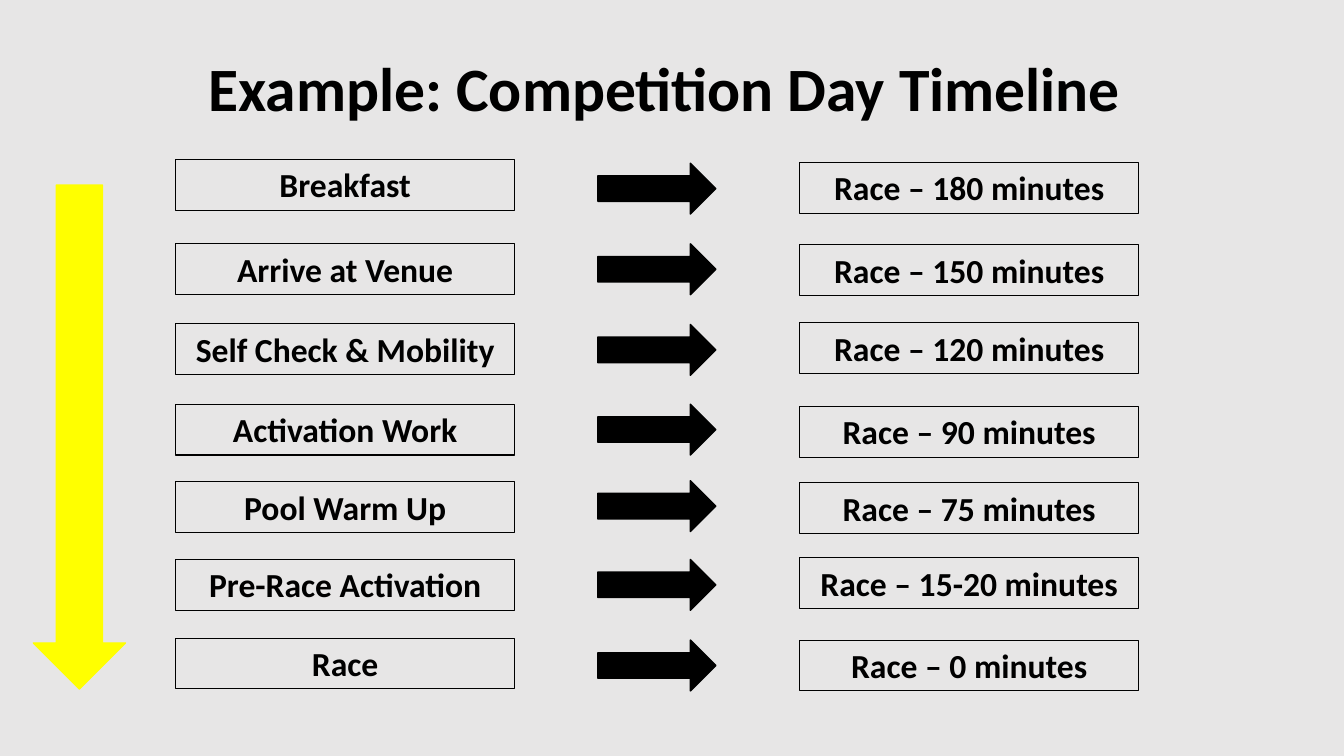
"""Build the competition day timeline slide."""
from pptx import Presentation
from pptx.dml.color import RGBColor
from pptx.enum.shapes import MSO_SHAPE
from pptx.enum.text import MSO_ANCHOR, MSO_AUTO_SIZE, PP_ALIGN
from pptx.util import Pt

TITLE = "Example: Competition Day Timeline "
STEPS = [
    ("Breakfast", "Race – 180 minutes"),
    ("Arrive at Venue", "Race – 150 minutes"),
    ("Self Check & Mobility", "Race – 120 minutes"),
    ("Activation Work", "Race – 90 minutes"),
    ("Pool Warm Up", "Race – 75 minutes"),
    ("Pre-Race Activation", "Race – 15-20 minutes"),
    ("Race", "Race – 0 minutes"),
]
TOPS = [
    (113.8, 116.6, 115.9),
    (174.2, 174.2, 175),
    (231.1, 231.8, 230.4),
    (288.7, 288.7, 290.2),
    (344.2, 343.4, 344.9),
    (399.6, 399.6, 398.2),
    (455.8, 457.2, 457.2),
]
COLORS = {"back": "E7E6E6", "ink": "000000", "flow": "FFFF00"}
FONT = "Calibri"
STEP_X, ARROW_X, TIME_X = 125.3, 427, 571
BOX_W, ARROW_W, ROW_H = 242.6, 84.3, 36.35

RECT = MSO_SHAPE.RECTANGLE
RIGHT = MSO_SHAPE.RIGHT_ARROW
DOWN = MSO_SHAPE.DOWN_ARROW
TOP, MIDDLE = MSO_ANCHOR.TOP, MSO_ANCHOR.MIDDLE
GROW, FIXED = MSO_AUTO_SIZE.SHAPE_TO_FIT_TEXT, MSO_AUTO_SIZE.NONE
CENTER = PP_ALIGN.CENTER


def color(name):
    return RGBColor.from_string(COLORS[name])


def write(shape, text, size=24, anchor=TOP, fit=GROW, spacing=1.0):
    frame = shape.text_frame
    frame.word_wrap = True
    frame.auto_size = fit
    frame.vertical_anchor = anchor
    para = frame.paragraphs[0]
    para.alignment = CENTER
    para.line_spacing = spacing
    run = para.add_run()
    run.text = text
    run.font.name = FONT
    run.font.size = Pt(size)
    run.font.bold = True
    run.font.color.rgb = color("ink")


def draw(slide, kind, x, y, w, h, fill=None, line="ink", width=1):
    shape = slide.shapes.add_shape(kind, Pt(x), Pt(y), Pt(w), Pt(h))
    shape.shadow.inherit = False
    if fill:
        shape.fill.solid()
        shape.fill.fore_color.rgb = color(fill)
    else:
        shape.fill.background()
    shape.line.color.rgb = color(line)
    shape.line.width = Pt(width)
    return shape


def main():
    deck = Presentation()
    deck.slide_width, deck.slide_height = Pt(960), Pt(540)
    slide = deck.slides.add_slide(deck.slide_layouts[5])
    slide.background.fill.solid()
    slide.background.fill.fore_color.rgb = color("back")

    title = slide.shapes.title
    title.left, title.top = Pt(66), Pt(28.8)
    title.width, title.height = Pt(828), Pt(72.7)
    write(title, TITLE, size=44, anchor=MIDDLE, fit=FIXED, spacing=0.9)

    draw(slide, DOWN, 23.8, 132.2, 65.8, 360, fill="flow", line="flow")
    for texts, (step_y, arrow_y, time_y) in zip(STEPS, TOPS):
        draw(slide, RIGHT, ARROW_X, arrow_y, ARROW_W, ROW_H, fill="ink")
        for text, x, y in zip(texts, (STEP_X, TIME_X), (step_y, time_y)):
            box = draw(slide, RECT, x, y, BOX_W, ROW_H, width=0.75)
            write(box, text)

    deck.save("out.pptx")


if __name__ == "__main__":
    main()
